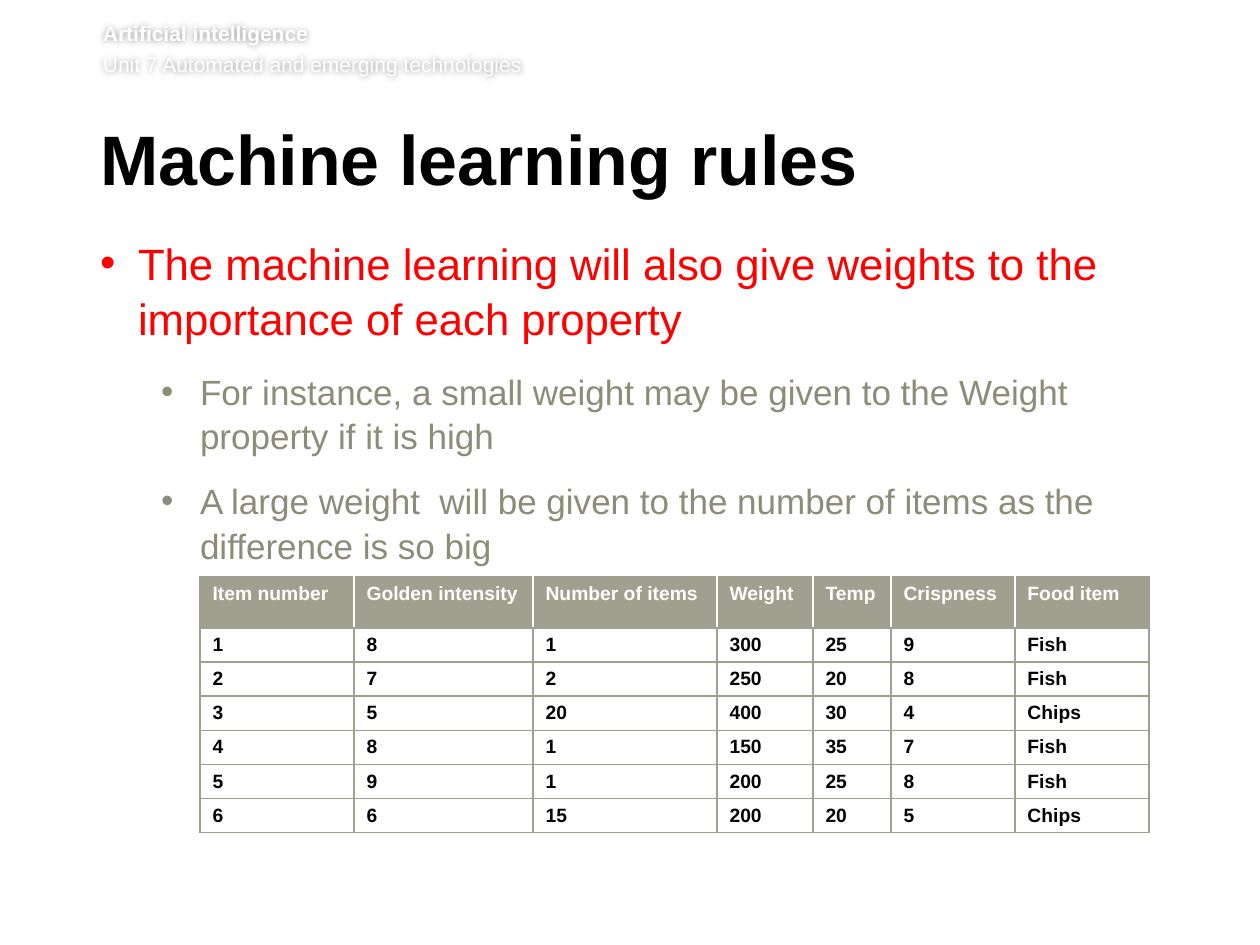
from lxml.etree import SubElement
from pptx import Presentation
from pptx.dml.color import RGBColor
from pptx.enum.text import MSO_ANCHOR, MSO_AUTO_SIZE, PP_ALIGN
from pptx.oxml.ns import qn
from pptx.util import Pt

SCALE = 914400 / 126
RED, GREY, SAGE = "FF0000", "8C8C78", "A0A090"
BLACK, WHITE = "000000", "FFFFFF"

LIST = [
    (0, "The machine learning will also give weights to the importance of each property"),
    (1, "For instance, a small weight may be given to the Weight property if it is high"),
    (1, "A large weight  will be given to the number of items as the difference is so big"),
]
LEVELS = [
    dict(left=38, hang=38, size=25, after=14, color=RED),
    dict(left=100, hang=39, size=20, after=12, color=GREY),
]
WIDTHS = [154, 179, 184, 96, 78, 124, 134]
ROWS = [
    ["Item number", "Golden intensity", "Number of items", "Weight", "Temp", "Crispness", "Food item"],
    ["1", "8", "1", "300", "25", "9", "Fish"],
    ["2", "7", "2", "250", "20", "8", "Fish"],
    ["3", "5", "20", "400", "30", "4", "Chips"],
    ["4", "8", "1", "150", "35", "7", "Fish"],
    ["5", "9", "1", "200", "25", "8", "Fish"],
    ["6", "6", "15", "200", "20", "5", "Chips"],
]


def px(n):
    return round(n * SCALE)


def paint(code):
    return RGBColor.from_string(code)


def style(para, size, color, bold=False):
    font = para.font
    font.name, font.size, font.bold = "Arial", Pt(size), bold
    font.color.rgb = paint(color)


def place(shape, box):
    shape.left, shape.top, shape.width, shape.height = map(px, box)


def frame(shape, pads):
    text = shape.text_frame
    text.word_wrap = True
    text.auto_size = MSO_AUTO_SIZE.NONE
    text.vertical_anchor = MSO_ANCHOR.TOP
    text.margin_left, text.margin_top, text.margin_right, text.margin_bottom = map(px, pads)
    return text


def glow(shape):
    effects = SubElement(shape.element.spPr, qn("a:effectLst"))
    shade = SubElement(effects, qn("a:outerShdw"), blurRad=str(px(7)), dist="0", dir="0", algn="ctr")
    color = SubElement(shade, qn("a:srgbClr"), val=BLACK)
    SubElement(color, qn("a:alpha"), val="40000")


def add_header(slide, box):
    shape = slide.shapes.add_textbox(*map(px, box))
    glow(shape)
    text = frame(shape, (0, 0, 0, 6))
    text.text = "Artificial intelligence\nUnit 7 Automated and emerging technologies"
    for row, para in enumerate(text.paragraphs):
        style(para, 12, WHITE, row == 0)
        para.space_before = Pt(2.9 * row)


def add_title(slide, box):
    shape = slide.shapes.title
    place(shape, box)
    text = frame(shape, (0, 6, 13, 6))
    text.text = "Machine learning rules"
    para = text.paragraphs[0]
    para.alignment = PP_ALIGN.LEFT
    para.line_spacing = Pt(39)
    para.space_after = Pt(15)
    style(para, 40, BLACK, True)


def add_list(slide, box):
    shape = slide.placeholders[1]
    place(shape, box)
    text = frame(shape, (0, 0, 13, 6))
    text.text = "\n".join(line for _, line in LIST)
    for para, (level, _) in zip(text.paragraphs, LIST):
        look = LEVELS[level]
        para.level = level
        para.line_spacing = 1.05
        para.space_before = Pt(0)
        para.space_after = Pt(look["after"])
        props = para._p.get_or_add_pPr()
        props.set("marL", str(px(look["left"])))
        props.set("indent", str(-px(look["hang"])))
        SubElement(props, qn("a:buFont"), typeface="Arial")
        SubElement(props, qn("a:buChar"), char="•")
        style(para, look["size"], look["color"])


def border(cell, colors):
    props = cell._tc.get_or_add_tcPr()
    for side, color in zip("LRTB", colors):
        line = SubElement(props, qn("a:ln" + side), w=str(Pt(1)))
        fill = SubElement(line, qn("a:solidFill"))
        SubElement(fill, qn("a:srgbClr"), val=color)


def add_grid(slide, left, top):
    heights = [51] + [30] * (len(ROWS) - 1)
    box = (left, top, sum(WIDTHS), sum(heights))
    table = slide.shapes.add_table(len(ROWS), len(WIDTHS), *map(px, box)).table
    table.horz_banding = False
    for col, width in zip(table.columns, WIDTHS):
        col.width = px(width)
    for row, height in zip(table.rows, heights):
        row.height = px(height)
    last = len(WIDTHS) - 1
    for r, values in enumerate(ROWS):
        head = r == 0
        for c, value in enumerate(values):
            cell = table.cell(r, c)
            cell.text = value
            style(cell.text_frame.paragraphs[0], 11, WHITE if head else BLACK, True)
            near = WHITE if head and c > 0 else SAGE
            far = WHITE if head and c < last else SAGE
            border(cell, (near, far, SAGE, SAGE))
            if head:
                cell.fill.solid()
                cell.fill.fore_color.rgb = paint(SAGE)
            else:
                cell.fill.background()


def main():
    deck = Presentation()
    deck.slide_width, deck.slide_height = px(1260), px(945)
    slide = deck.slides.add_slide(deck.slide_layouts[1])
    add_header(slide, (103, 21, 1111, 62))
    add_title(slide, (100, 125, 1077, 92))
    add_list(slide, (100, 234, 1075, 476))
    add_grid(slide, 200, 577)
    deck.save("out.pptx")


if __name__ == "__main__":
    main()
